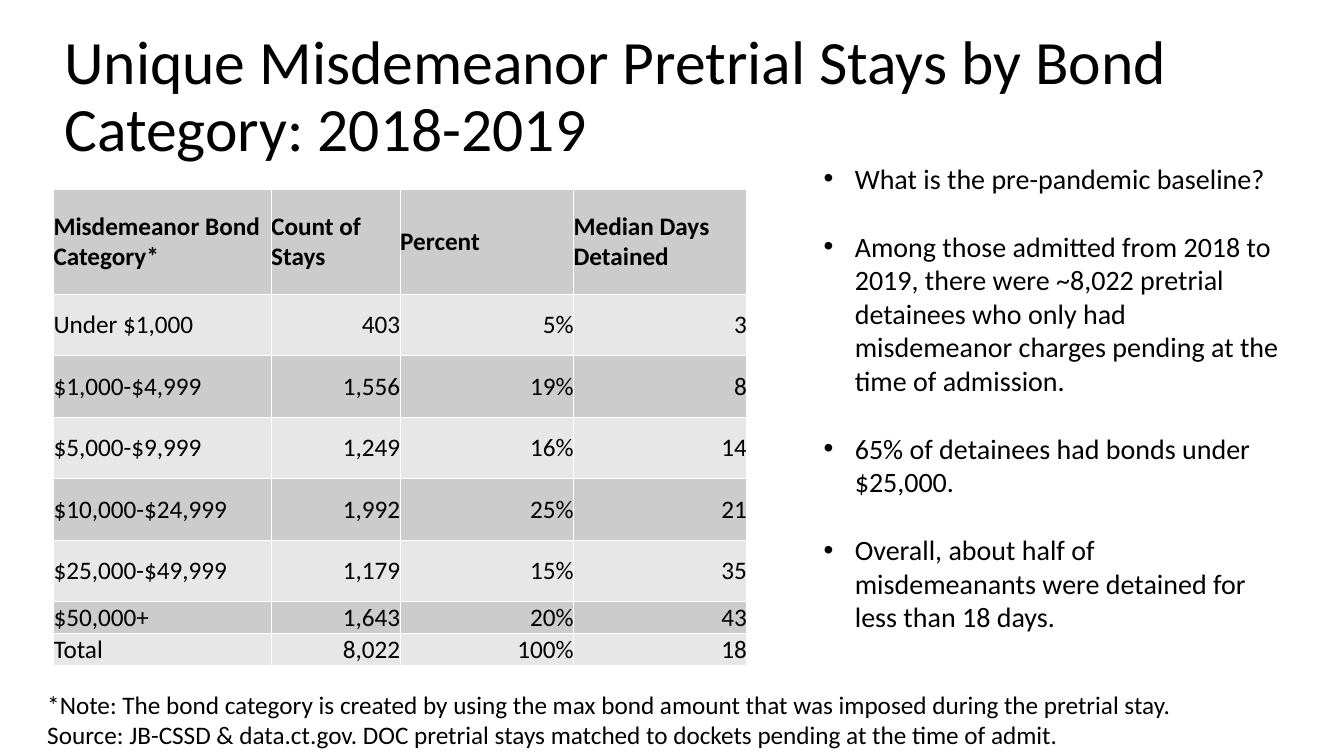
from dataclasses import dataclass

from lxml.etree import SubElement
from pptx import Presentation
from pptx.dml.color import RGBColor
from pptx.enum.text import MSO_ANCHOR, PP_ALIGN
from pptx.oxml import parse_xml
from pptx.oxml.ns import nsdecls, qn
from pptx.util import Inches, Pt


@dataclass(frozen=True)
class Theme:
    """Hold the font, colours and type sizes of the slide."""
    font: str = "Calibri"
    ink: str = "000000"
    dark: str = "CCCCCC"
    light: str = "E7E7E7"
    rule: str = "FFFFFF"
    title: int = 44
    body: int = 20
    small: int = 18
    gap: float = 24.4


THEME = Theme()
WIDE, HIGH = Inches(13.33), Inches(7.5)

TITLE = "Unique Misdemeanor Pretrial Stays by Bond Category: 2018-2019"
NOTES = [
    "*Note: The bond category is created by using the max bond amount that was imposed during the pretrial stay.",
    "Source: JB-CSSD & data.ct.gov. DOC pretrial stays matched to dockets pending at the time of admit.",
]
POINTS = [
    "What is the pre-pandemic baseline?",
    "Among those admitted from 2018 to 2019, there were ~8,022 pretrial detainees who only had "
    "misdemeanor charges pending at the time of admission.",
    "65% of detainees had bonds under $25,000.",
    "Overall, about half of misdemeanants were detained for less than 18 days.",
]
STAYS = [
    ("Misdemeanor Bond Category*", "Count of Stays", "Percent", "Median Days Detained"),
    ("Under $1,000", "403", "5%", "3"),
    ("$1,000-$4,999", "1,556", "19%", "8"),
    ("$5,000-$9,999", "1,249", "16%", "14"),
    ("$10,000-$24,999", "1,992", "25%", "21"),
    ("$25,000-$49,999", "1,179", "15%", "35"),
    ("$50,000+", "1,643", "20%", "43"),
    ("Total", "8,022", "100%", "18"),
]
COLS = [16.2, 9.6, 12.9, 12.9]
ROWS = [13.87] + [8.13] * 5 + [4.27] * 2


def across(share):
    """Turn a percentage of the slide width into a length."""
    return round(WIDE * share / 100)


def down(share):
    """Turn a percentage of the slide height into a length."""
    return round(HIGH * share / 100)


def place(left, top, width, height):
    """Turn percentages of the slide into a position and size."""
    return across(left), down(top), across(width), down(height)


def add_run(para, text, size, bold=False):
    """Add one run in the theme font and ink."""
    run = para.add_run()
    run.text = text
    run.font.name = THEME.font
    run.font.size = Pt(size)
    run.font.bold = bold
    run.font.color.rgb = RGBColor.from_string(THEME.ink)


def add_dot(para):
    """Give a paragraph a round bullet with a hanging indent."""
    props = para._p.get_or_add_pPr()
    props.set("marL", str(Inches(0.31)))
    props.set("indent", str(-Inches(0.31)))
    SubElement(props, qn("a:buFont"), typeface="Arial")
    SubElement(props, qn("a:buChar"), char="•")


def add_text(slide, box, lines, size, dots=False, gap=0, lead=None, anchor=MSO_ANCHOR.TOP):
    """Add a wrapped text box with one paragraph per line."""
    frame = slide.shapes.add_textbox(*place(*box)).text_frame
    frame.word_wrap = True
    frame.vertical_anchor = anchor
    for i, line in enumerate(lines):
        para = frame.add_paragraph() if i else frame.paragraphs[0]
        if dots:
            add_dot(para)
        if i and gap:
            para.space_before = Pt(gap)
        if lead:
            para.line_spacing = lead
        add_run(para, line, size)


def add_rules(cell):
    """Draw a thin rule on each side of a cell."""
    props = cell._tc.get_or_add_tcPr()
    for i, side in enumerate("LRTB"):
        props.insert(i, parse_xml(
            f'<a:ln{side} {nsdecls("a")} w="{Pt(1)}"><a:solidFill>'
            f'<a:srgbClr val="{THEME.rule}"/></a:solidFill></a:ln{side}>'))


def fill_cell(cell, text, row, col):
    """Set the fill, rules and text of one cell."""
    cell.fill.solid()
    cell.fill.fore_color.rgb = RGBColor.from_string(THEME.light if row % 2 else THEME.dark)
    add_rules(cell)
    cell.margin_left = cell.margin_right = cell.margin_top = cell.margin_bottom = 0
    cell.vertical_anchor = MSO_ANCHOR.MIDDLE
    para = cell.text_frame.paragraphs[0]
    para.alignment = PP_ALIGN.RIGHT if row and col else PP_ALIGN.LEFT
    add_run(para, text, THEME.small, bold=row == 0)


def add_grid(slide, left, top, data):
    """Add the table of stays."""
    box = place(left, top, sum(COLS), sum(ROWS))
    table = slide.shapes.add_table(len(ROWS), len(COLS), *box).table
    for col, share in zip(table.columns, COLS):
        col.width = across(share)
    for row, share in zip(table.rows, ROWS):
        row.height = down(share)
    for r, line in enumerate(data):
        for c, text in enumerate(line):
            fill_cell(table.cell(r, c), text, r, c)


def main():
    """Build the slide and save it."""
    deck = Presentation()
    deck.slide_width, deck.slide_height = WIDE, HIGH
    slide = deck.slides.add_slide(deck.slide_layouts[6])
    add_text(slide, (4.05, 3.33, 86.27, 19.33), [TITLE], THEME.title,
             lead=0.9, anchor=MSO_ANCHOR.MIDDLE)
    add_text(slide, (2.78, 90.53, 88.9, 9.47), NOTES, THEME.small)
    add_text(slide, (60.54, 20.67, 35.41, 79.33), POINTS, THEME.body,
             dots=True, gap=THEME.gap)
    add_grid(slide, 3.98, 25.07, STAYS)
    deck.save("out.pptx")


if __name__ == "__main__":
    main()
